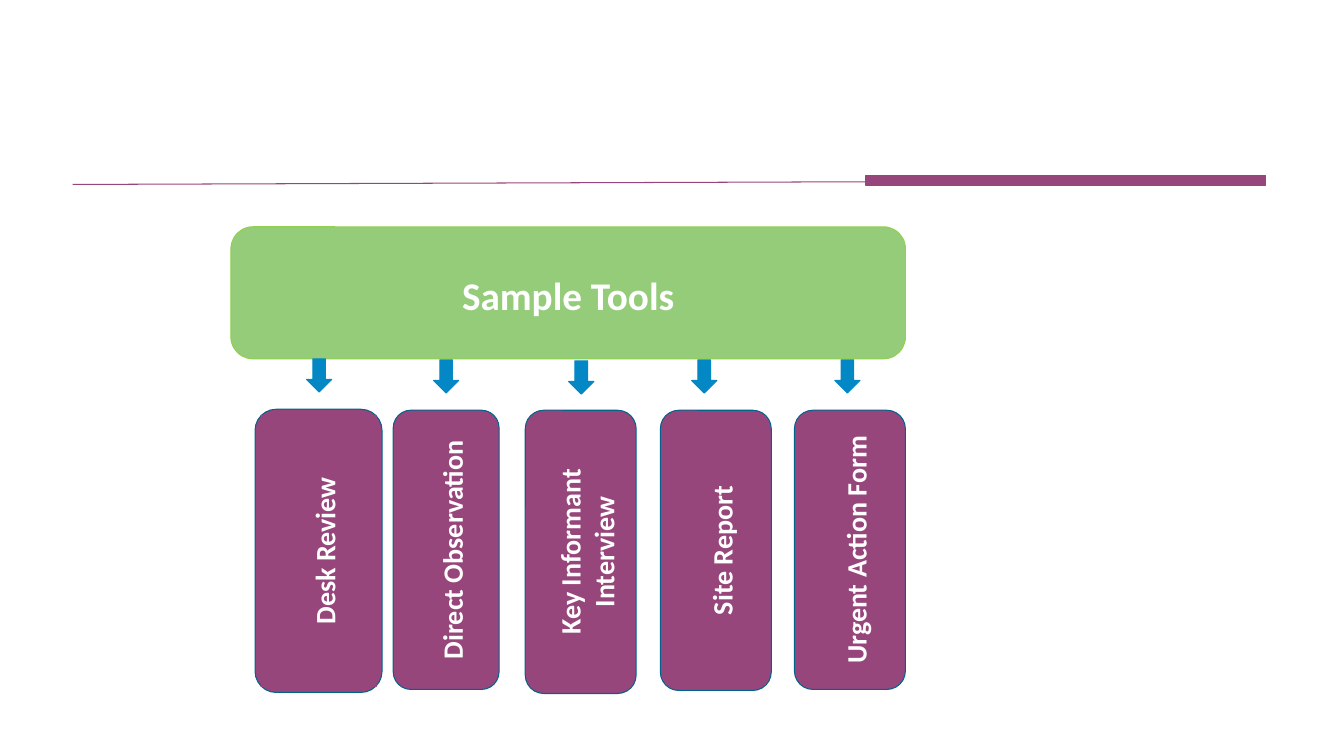
"""Build the Sample Tools slide: one heading box with arrows to five tools."""
import pptx
import pptx.dml.color
import pptx.enum.shapes
import pptx.enum.text
import pptx.oxml.ns
import pptx.util
from lxml import etree

Inches = pptx.util.Inches
Pt = pptx.util.Pt
SHAPE = pptx.enum.shapes.MSO_SHAPE
PURPLE, GREEN, BLUE, NAVY = "97467C", "94CC7A", "0388C5", "02628C"


def rgb(value):
    return pptx.dml.color.RGBColor.from_string(value)


def shape(kind, x, y, w, h, fill, line=None, weight=0.75, text=None, size=20, top=0.16, turn=0):
    sp = s.shapes.add_shape(kind, Inches(x), Inches(y), Inches(w), Inches(h))
    sp.shadow.inherit = False
    sp.rotation = turn
    sp.fill.solid()
    sp.fill.fore_color.rgb = rgb(fill)
    if line:
        sp.line.color.rgb = rgb(line)
        sp.line.width = Pt(weight)
    else:
        sp.line.fill.background()
    if text:
        tf = sp.text_frame
        tf.word_wrap = True
        tf.vertical_anchor = pptx.enum.text.MSO_ANCHOR.MIDDLE
        tf.margin_left = tf.margin_right = Inches(0.1)
        tf.margin_top, tf.margin_bottom = Inches(top), Inches(0.05)
        p = tf.paragraphs[0]
        p.alignment = pptx.enum.text.PP_ALIGN.CENTER
        r = p.add_run()
        r.text = text
        r.font.name, r.font.size, r.font.bold = "Calibri", Pt(size), True
        r.font.color.rgb = rgb("FFFFFF")


prs = pptx.Presentation()
prs.slide_width, prs.slide_height = Inches(13.33), Inches(7.5)
s = prs.slides.add_slide(prs.slide_layouts[6])

rule = s.shapes.add_connector(pptx.enum.shapes.MSO_CONNECTOR.STRAIGHT,
                              Inches(0.72), Inches(1.83), Inches(12.55), Inches(1.79))
rule.line.color.rgb = rgb(PURPLE)
rule.line.width = Pt(0.75)
etree.SubElement(rule.element.spPr, pptx.oxml.ns.qn("a:effectLst"))
shape(SHAPE.RECTANGLE, 8.59, 1.74, 3.96, 0.1, PURPLE, PURPLE, weight=1)

shape(SHAPE.ROUNDED_RECTANGLE, 2.29, 2.25, 6.69, 1.31, GREEN, "92D050",
      text="Sample Tools", size=28, top=0.08)

tools = [
    ("Desk Review", 3.04, 3.56, 2.53, 4.06, 1.26, 2.81),
    ("Direct Observation", 4.3, 3.57, 3.9, 4.07, 1.05, 2.77),
    ("Key Informant Interview", 5.64, 3.58, 5.21, 4.07, 1.1, 2.81),
    ("Site Report", 6.86, 3.57, 6.55, 4.07, 1.1, 2.78),
    ("Urgent Action Form", 8.28, 3.57, 7.88, 4.07, 1.1, 2.77),
]
for name, arrow_x, arrow_y, x, y, w, h in tools:
    shape(SHAPE.DOWN_ARROW, arrow_x, arrow_y, 0.25, 0.33, BLUE, BLUE)
    shape(SHAPE.ROUNDED_RECTANGLE, x, y, w, h, PURPLE, NAVY)
    label_w, label_h = h - 0.11, w - 0.11
    shape(SHAPE.RECTANGLE, x + (w - label_w) / 2, y + (h - label_h) / 2,
          label_w, label_h, PURPLE, text=name, turn=270)

prs.save("out.pptx")
